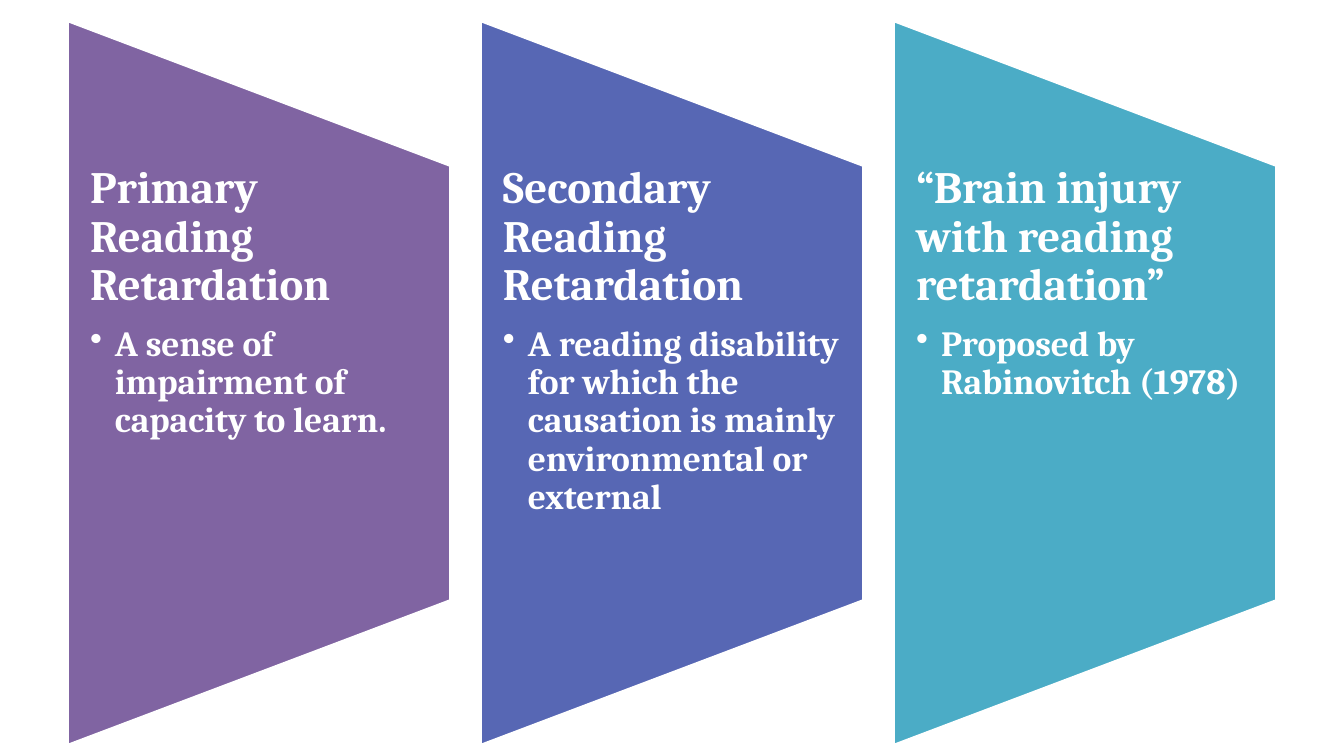
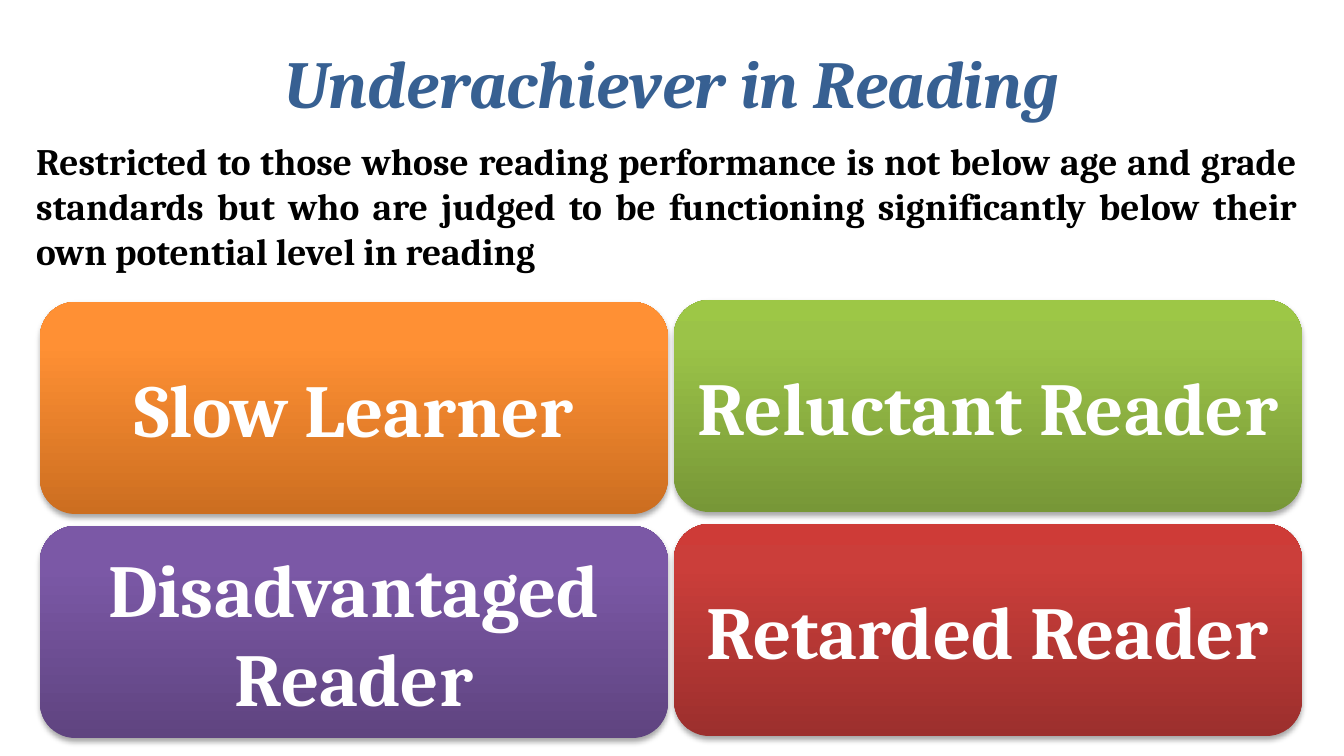
import pptx
import pptx.util
import pptx.dml.color
import pptx.enum.shapes
import pptx.enum.text
import pptx.oxml
import pptx.oxml.ns

# Content
KINDS = [
    ("Primary Reading Retardation", "A sense of impairment of capacity to learn.", "purple"),
    ("Secondary Reading Retardation",
     "A reading disability for which the causation is mainly environmental or external", "indigo"),
    ("“Brain injury with reading retardation”", "Proposed by Rabinovitch (1978)", "teal"),
]
TITLE = "Underachiever in Reading"
DEFINITION = ("Restricted to those whose reading performance is not below age and grade "
              "standards but who are judged to be functioning significantly below their "
              "own potential level in reading")
# Gradient colours run from the bottom edge to the top
READERS = [
    [("Slow Learner", ("CC6E20", "FF9034", "FF9136")),
     ("Disadvantaged Reader", ("5F4480", "7B58A6", "7C57A8"))],
    [("Reluctant Reader", ("779737", "9BC348", "9DC746")),
     ("Retarded Reader", ("9C2F2D", "CB3E3A", "CE3B37"))],
]

# Shared style
COLORS = {"white": "FFFFFF", "black": "000000", "title": "376092",
          "purple": "8064A2", "indigo": "5767B4", "teal": "4BACC6"}
STOPS = (0, 80, 100)
SHAPES = pptx.enum.shapes.MSO_SHAPE
ALIGN = pptx.enum.text.PP_ALIGN
ANCHOR = pptx.enum.text.MSO_ANCHOR
Pt = pptx.util.Pt

# Layout in px
PX_PER_INCH = 134.4
SLIDE = (1344, 756)
PANEL = {"left": 67, "top": 20, "width": 384, "height": 726, "pitch": 413}
PANEL_TEXT = {"top": 165, "height": 435, "inset": 23, "indent": 25}
TITLE_BOX = (67, 31, 1210, 101)
DEFINITION_BOX = (23, 132, 1288, 157)
CARD = {"left": 40, "width": 628, "height": 212, "col_pitch": 634, "row_pitch": 224}
CARD_TOPS = (302, 300)


def px(length):
    return round(length * 914400 / PX_PER_INCH)


def rgb(name):
    return pptx.dml.color.RGBColor.from_string(COLORS[name])


def apply(target, values):
    for name, value in values.items():
        setattr(target, name, value)


def xml(body):
    tag, rest = body.split(" ", 1)
    return pptx.oxml.parse_xml(f"{tag} {pptx.oxml.ns.nsdecls('a')} {rest}")


def write(paragraph, text, size, color, italic=False, **layout):
    apply(paragraph, layout)
    run = paragraph.add_run()
    run.text = text
    apply(run.font, {"name": "Cambria", "size": Pt(size), "bold": True, "italic": italic})
    run.font.color.rgb = rgb(color)


def add_textbox(slide, box, inset=None):
    frame = slide.shapes.add_textbox(*map(px, box)).text_frame
    frame.word_wrap = True
    if inset is not None:
        apply(frame, {"margin_left": px(inset), "margin_right": px(inset),
                      "margin_top": 0, "margin_bottom": 0})
    return frame


def add_panel(slide, index, heading, point, color):
    left = PANEL["left"] + index * PANEL["pitch"]
    width, height = PANEL["width"], PANEL["height"]
    # The shape is laid out flat, then turned about its centre
    shift = (height - width) / 2
    panel = slide.shapes.add_shape(
        SHAPES.FLOWCHART_MANUAL_OPERATION,
        *map(px, (left - shift, PANEL["top"] + shift, height, width)))
    panel.rotation = 270
    panel.shadow.inherit = False
    panel.fill.solid()
    panel.fill.fore_color.rgb = rgb(color)
    panel.line.color.rgb = rgb("white")
    panel.line.width = Pt(2)

    frame = add_textbox(slide, (left, PANEL_TEXT["top"], width, PANEL_TEXT["height"]),
                        PANEL_TEXT["inset"])
    write(frame.paragraphs[0], heading, 24, "white", line_spacing=0.9, space_after=Pt(8.4))
    bullet = frame.add_paragraph()
    write(bullet, point, 19, "white", level=1, line_spacing=0.9, space_after=Pt(2.85))
    props = bullet._p.get_or_add_pPr()
    indent = px(PANEL_TEXT["indent"])
    props.set("marL", str(indent))
    props.set("indent", str(-indent))
    props.append(xml('<a:buChar char="•"/>'))


def add_card(slide, column, row, label, gradient):
    card = slide.shapes.add_shape(
        SHAPES.ROUNDED_RECTANGLE,
        *map(px, (CARD["left"] + column * CARD["col_pitch"],
                  CARD_TOPS[column] + row * CARD["row_pitch"],
                  CARD["width"], CARD["height"])))
    card.line.fill.background()
    card.shadow.inherit = False
    stops = "".join(f'<a:gs pos="{stop * 1000}"><a:srgbClr val="{color}"/></a:gs>'
                    for stop, color in zip(STOPS, gradient))
    props = card._element.spPr
    props.find(pptx.oxml.ns.qn("a:prstGeom")).addnext(xml(
        f'<a:gradFill rotWithShape="1"><a:gsLst>{stops}</a:gsLst>'
        '<a:lin ang="16200000" scaled="0"/></a:gradFill>'))
    props.find(pptx.oxml.ns.qn("a:effectLst")).append(xml(
        f'<a:outerShdw blurRad="{Pt(3.1)}" dist="{Pt(1.8)}" dir="5400000" rotWithShape="0">'
        f'<a:srgbClr val="{COLORS["black"]}"><a:alpha val="35000"/></a:srgbClr></a:outerShdw>'))
    apply(card.text_frame, {"word_wrap": True, "vertical_anchor": ANCHOR.MIDDLE})
    write(card.text_frame.paragraphs[0], label, 40, "white", alignment=ALIGN.CENTER)


def main():
    deck = pptx.Presentation()
    deck.slide_width, deck.slide_height = map(px, SLIDE)
    title_only, blank = deck.slide_layouts[5], deck.slide_layouts[6]

    # Kinds of reading retardation
    kinds = deck.slides.add_slide(blank)
    for index, kind in enumerate(KINDS):
        add_panel(kinds, index, *kind)

    # Underachievers
    readers = deck.slides.add_slide(title_only)
    title = readers.shapes.title
    apply(title, dict(zip(("left", "top", "width", "height"), map(px, TITLE_BOX))))
    title.text_frame.vertical_anchor = ANCHOR.MIDDLE
    write(title.text_frame.paragraphs[0], TITLE, 36, "title", italic=True,
          alignment=ALIGN.CENTER)
    definition = add_textbox(readers, DEFINITION_BOX)
    write(definition.paragraphs[0], DEFINITION, 20, "black",
          alignment=ALIGN.JUSTIFY, space_before=Pt(4))
    for column, cards in enumerate(READERS):
        for row, (label, gradient) in enumerate(cards):
            add_card(readers, column, row, label, gradient)

    deck.save("out.pptx")


if __name__ == "__main__":
    main()
